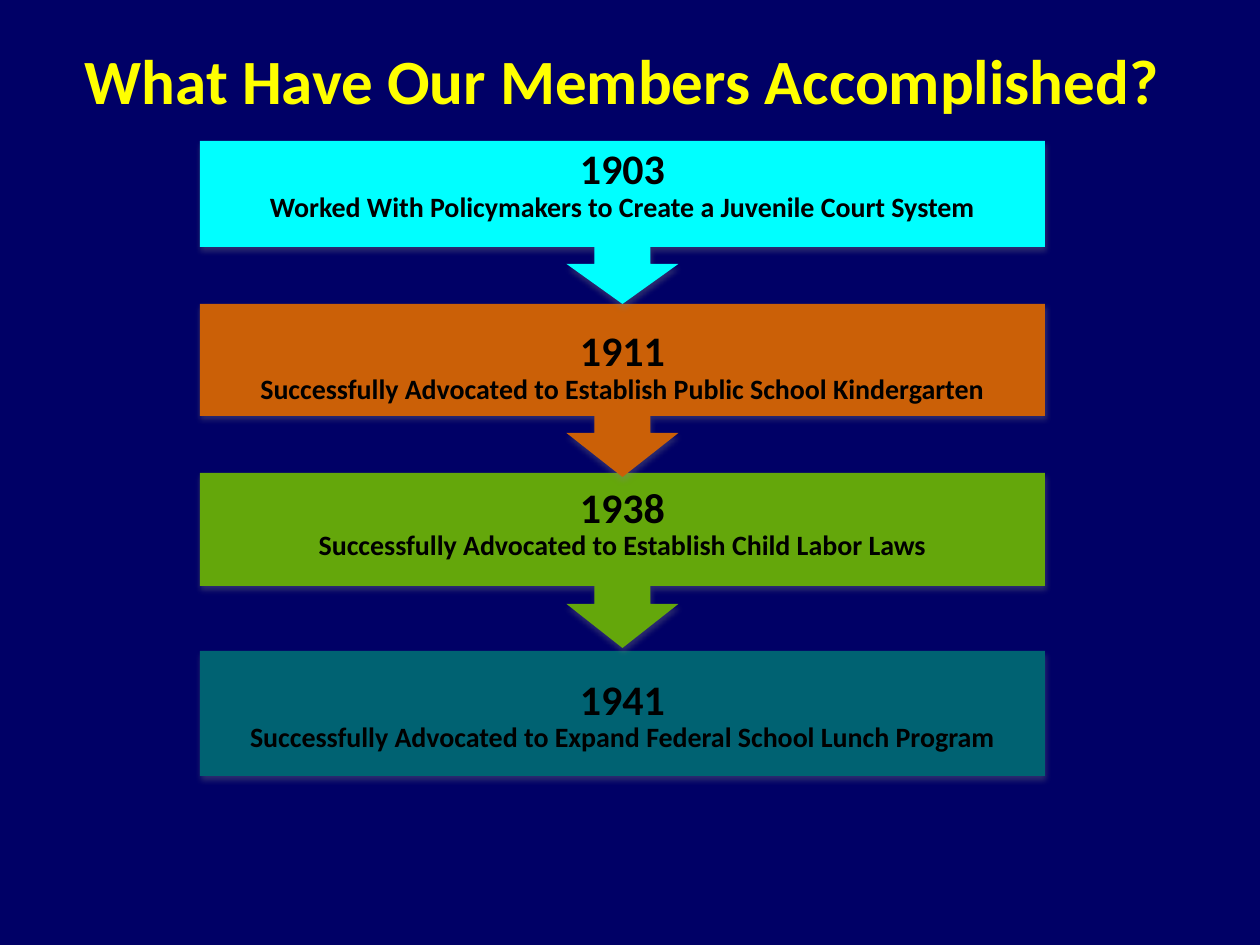
from collections import namedtuple
from lxml.etree import SubElement
from pptx import Presentation
from pptx.dml.color import RGBColor
from pptx.enum.shapes import MSO_SHAPE as SHAPE
from pptx.enum.text import MSO_ANCHOR as ANCHOR, PP_ALIGN as ALIGN
from pptx.oxml.ns import qn
from pptx.util import Emu, Pt

EMU_PER_PX = 914400 / 126
BOX_LEFT, BOX_WIDTH = 200, 845
SHAFT_WIDTH, HEAD_WIDTH = 56, 112
YEAR_FORMAT = {"name": "Calibri", "size": Pt(24), "bold": True}
DEED_FORMAT = {**YEAR_FORMAT, "size": Pt(16)}
TITLE_FORMAT = {**YEAR_FORMAT, "size": Pt(36)}

Milestone = namedtuple("Milestone", "year deed fill top box arrow head shift")
MILESTONES = [
    Milestone("1903", "Worked With Policymakers to Create a Juvenile Court System",
              "00FFFF", 141, 106, 57, 40, -11),
    Milestone("1911", "Successfully Advocated to Establish Public School Kindergarten",
              "CB6007", 304, 112, 61, 44, 5),
    Milestone("1938", "Successfully Advocated to Establish Child Labor Laws",
              "64A70B", 473, 113, 62, 44, -8),
    Milestone("1941", "Successfully Advocated to Expand Federal School Lunch Program",
              "006272", 651, 125, 0, 0, 0),
]


def px(n):
    return Emu(round(n * EMU_PER_PX))


def paint(color_format, value):
    color_format.rgb = RGBColor.from_string(value)


def set_attributes(target, values):
    for name, value in values.items():
        setattr(target, name, value)


def write(p, text, font, color):
    p.alignment = ALIGN.CENTER
    r = p.add_run()
    r.text = text
    set_attributes(r.font, font)
    paint(r.font.color, color)


def add_shadow(sp):
    sp.shadow.inherit = False
    effects = sp.element.spPr.find(qn("a:effectLst"))
    shadow = SubElement(effects, qn("a:outerShdw"), blurRad="40000",
                        dist="23000", dir="5400000", rotWithShape="0")
    color = SubElement(shadow, qn("a:srgbClr"), val="808080")
    SubElement(color, qn("a:alpha"), val="35000")


def add_title(s, text):
    sp = s.shapes.title
    set_attributes(sp, {"left": px(55), "top": px(0),
                        "width": px(1134), "height": px(158)})
    tf = sp.text_frame
    tf.vertical_anchor = ANCHOR.MIDDLE
    write(tf.paragraphs[0], text, TITLE_FORMAT, "FFFF00")


def add_milestone(s, m):
    height = m.box + m.arrow
    kind = SHAPE.DOWN_ARROW_CALLOUT if m.arrow else SHAPE.RECTANGLE
    sp = s.shapes.add_shape(kind, px(BOX_LEFT), px(m.top),
                            px(BOX_WIDTH), px(height))
    if m.arrow:
        for i, length in enumerate((SHAFT_WIDTH, HEAD_WIDTH / 2, m.head, m.box)):
            sp.adjustments[i] = length / height
    sp.fill.solid()
    paint(sp.fill.fore_color, m.fill)
    sp.line.fill.background()
    add_shadow(sp)
    tf = sp.text_frame
    set_attributes(tf, {"word_wrap": True, "vertical_anchor": ANCHOR.MIDDLE,
                        "margin_left": px(24), "margin_right": px(24),
                        "margin_top": px(max(2 * m.shift, 0)),
                        "margin_bottom": px(max(-2 * m.shift, 0))})
    write(tf.paragraphs[0], m.year, YEAR_FORMAT, "000000")
    p = tf.add_paragraph()
    p.line_spacing = 0.9
    write(p, m.deed, DEED_FORMAT, "000000")


def main():
    """Build the slide of milestones linked by arrows."""
    prs = Presentation()
    prs.slide_width, prs.slide_height = px(1260), px(945)
    s = prs.slides.add_slide(prs.slide_layouts[5])
    s.background.fill.solid()
    paint(s.background.fill.fore_color, "000066")
    add_title(s, "What Have Our Members Accomplished?")
    for milestone in reversed(MILESTONES):
        add_milestone(s, milestone)
    prs.save("out.pptx")


if __name__ == "__main__":
    main()
